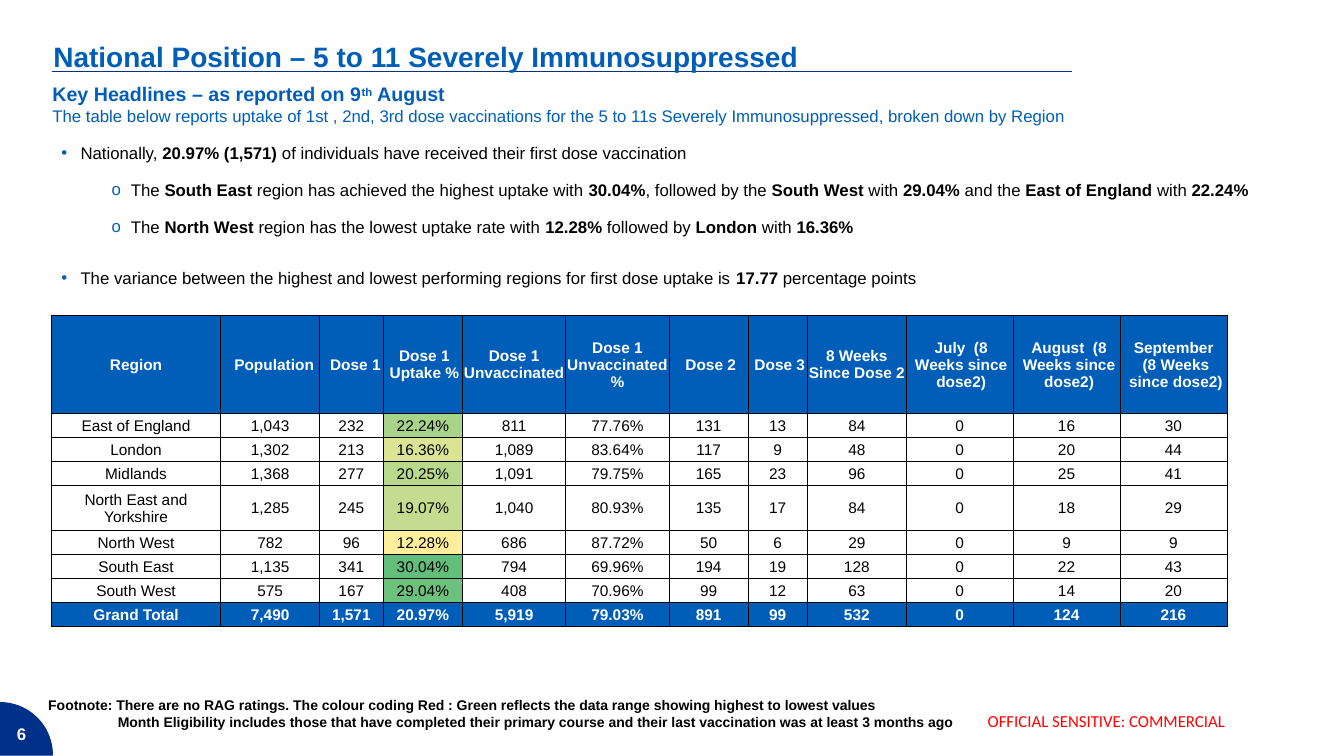
import math

import pptx
import pptx.dml.color
import pptx.enum.shapes
import pptx.enum.text
import pptx.oxml
import pptx.oxml.ns
import pptx.util
from pptx.util import Inches

BLUE, NAVY, BLACK, WHITE, RED = "005EB8", "003087", "000000", "FFFFFF", "FF0000"
LOW_COLOUR, HIGH_COLOUR = "FFEF9C", "63BE7B"

TITLE = "National Position – 5 to 11 Severely Immunosuppressed"
HEADLINE = ("Key Headlines – as reported on 9", "th", " August")
SUBHEAD = ("The table below reports uptake of 1st , 2nd, 3rd dose vaccinations for the "
           "5 to 11s Severely Immunosuppressed, broken down by Region")
MARKING = "OFFICIAL SENSITIVE: COMMERCIAL"
PAGE_NUMBER = "6"

# bullet, left indent, space before, space after, text with **bold** parts
FINDINGS = [
    ("•", 0.19, 0, 6, "Nationally, **20.97% (1,571) **of individuals have received their "
     "first dose vaccination"),
    ("o", 0.69, 6, 6, "The **South East** region has achieved the highest uptake with "
     "**30.04%**, followed by the **South West **with **29.04% **and the "
     "**East of England **with **22.24%**"),
    ("o", 0.69, 6, 6, "The **North West **region has the lowest uptake rate with "
     "**12.28% **followed by **London** with **16.36%**"),
    ("•", 0.19, 16, 0, "The variance between the highest and lowest performing regions for "
     "first dose uptake is **17.77** percentage points"),
]

# heading, column width, left inset of the heading
COLUMNS = [
    ("Region", 1.68, 0.01), ("Population", 0.98, 0.09), ("Dose 1", 0.63, 0.09),
    ("Dose 1 Uptake %", 0.79, 0.04), ("Dose 1 Unvaccinated", 1.02, 0.01),
    ("Dose 1 Unvaccinated %", 1.03, 0.01), ("Dose 2", 0.78, 0.05), ("Dose 3", 0.59, 0.05),
    ("8 Weeks Since Dose 2", 0.98, 0.01), ("July  (8 Weeks since dose2)", 1.06, 0.04),
    ("August  (8 Weeks since dose2)", 1.06, 0.06),
    ("September  (8 Weeks since dose2)", 1.06, 0.06),
]
UPTAKE = 3
REGIONS = [
    ("East of England", "1,043", "232", "22.24%", "811", "77.76%", "131", "13", "84", "0", "16", "30"),
    ("London", "1,302", "213", "16.36%", "1,089", "83.64%", "117", "9", "48", "0", "20", "44"),
    ("Midlands", "1,368", "277", "20.25%", "1,091", "79.75%", "165", "23", "96", "0", "25", "41"),
    ("North East and Yorkshire", "1,285", "245", "19.07%", "1,040", "80.93%", "135", "17", "84", "0", "18", "29"),
    ("North West", "782", "96", "12.28%", "686", "87.72%", "50", "6", "29", "0", "9", "9"),
    ("South East", "1,135", "341", "30.04%", "794", "69.96%", "194", "19", "128", "0", "22", "43"),
    ("South West", "575", "167", "29.04%", "408", "70.96%", "99", "12", "63", "0", "14", "20"),
]
TOTAL = ("Grand Total", "7,490", "1,571", "20.97%", "5,919", "79.03%", "891", "99", "532", "0", "124", "216")
ROW_HEIGHTS = [0.97, 0.24, 0.24, 0.24, 0.44, 0.24, 0.24, 0.24, 0.24]

# text, left indent
FOOTNOTE = [
    ("Footnote: There are no RAG ratings. The colour coding Red : Green reflects the data "
     "range showing highest to lowest values", 0),
    ("Month Eligibility includes those that have completed their primary course and their "
     "last vaccination was at least 3 months ago", 0.69),
]

MIDDLE = pptx.enum.text.MSO_ANCHOR.MIDDLE
CENTER = pptx.enum.text.PP_ALIGN.CENTER


def rgb(colour):
    return pptx.dml.color.RGBColor.from_string(colour)


def apply(target, values):
    for name, value in values.items():
        setattr(target, name, value)


def add_run(paragraph, text, size, colour, bold=False, font="Arial"):
    run = paragraph.add_run()
    run.text = text
    apply(run.font, {"name": font, "size": pptx.util.Pt(size), "bold": bold})
    run.font.color.rgb = rgb(colour)
    return run


def add_box(left, top, width, height, **frame_values):
    frame = slide.shapes.add_textbox(*map(Inches, (left, top, width, height))).text_frame
    apply(frame, {"word_wrap": True, **frame_values})
    return frame


def paragraph_at(frame, index):
    return frame.add_paragraph() if index else frame.paragraphs[0]


def indent(paragraph, left, hanging=0, bullet=None):
    properties = paragraph._p.get_or_add_pPr()
    properties.set("marL", str(Inches(left)))
    properties.set("indent", str(-Inches(hanging)))
    if bullet:
        namespace = pptx.oxml.ns.nsdecls("a")
        for xml in (f'<a:buClr {namespace}><a:srgbClr val="{BLUE}"/></a:buClr>',
                    f'<a:buFont {namespace} typeface="Arial"/>',
                    f'<a:buChar {namespace} char="{bullet}"/>'):
            properties.append(pptx.oxml.parse_xml(xml))


def add_plain_table(left, top, widths, heights):
    """Add a table without banding, with narrow cell margins and no fills."""
    size = map(Inches, (left, top, sum(widths), sum(heights)))
    table = slide.shapes.add_table(len(heights), len(widths), *size).table
    apply(table, {"first_row": False, "horz_banding": False})
    for column, width in zip(table.columns, widths):
        column.width = Inches(width)
    for row, height in zip(table.rows, heights):
        row.height = Inches(height)
    for cell in table.iter_cells():
        apply(cell, {"margin_left": Inches(0.01), "margin_right": Inches(0.01),
                     "margin_top": Inches(0.01), "margin_bottom": 0})
        cell.fill.background()
    return table


def add_borders(cell):
    properties = cell._tc.get_or_add_tcPr()
    for position, side in enumerate(("lnL", "lnR", "lnT", "lnB")):
        properties.insert(position, pptx.oxml.parse_xml(
            f'<a:{side} {pptx.oxml.ns.nsdecls("a")} w="{pptx.util.Pt(0.5)}">'
            f'<a:solidFill><a:srgbClr val="{BLACK}"/></a:solidFill></a:{side}>'))


def percent(text):
    return float(text.rstrip("%"))


def scale_colour(uptake):
    """Blend linearly from the lowest to the highest regional uptake."""
    uptakes = [percent(region[UPTAKE]) for region in REGIONS]
    share = (uptake - min(uptakes)) / (max(uptakes) - min(uptakes))
    channels = zip(rgb(LOW_COLOUR), rgb(HIGH_COLOUR))
    return "".join(f"{round(low + share * (high - low)):02X}" for low, high in channels)


presentation = pptx.Presentation()
apply(presentation, {"slide_width": Inches(13.33), "slide_height": Inches(7.5)})
slide = presentation.slides.add_slide(presentation.slide_layouts[6])

marking = add_box(9.61, 6.95, 2.73, 0.4, vertical_anchor=MIDDLE).paragraphs[0]
marking.alignment = CENTER
add_run(marking, MARKING, 12, RED, font="Calibri")

rule = slide.shapes.add_connector(pptx.enum.shapes.MSO_CONNECTOR.STRAIGHT,
                                  *map(Inches, (0.52, 0.71, 10.63, 0.71)))
rule.line.color.rgb = rgb(NAVY)
rule.line.width = pptx.util.Pt(1)
rule._element.spPr.append(pptx.oxml.parse_xml(f'<a:effectLst {pptx.oxml.ns.nsdecls("a")}/>'))

corner_radius, arc_steps = 0.52, 30
arc = [(Inches(corner_radius * math.sin(angle)), Inches(7.49 - corner_radius * math.cos(angle)))
       for angle in (math.pi / 2 * step / arc_steps for step in range(arc_steps + 1))]
outline = slide.shapes.build_freeform(0, Inches(7.49))
outline.add_line_segments(arc, close=True)
corner = outline.convert_to_shape()
corner.shadow.inherit = False
corner.fill.solid()
corner.fill.fore_color.rgb = rgb(NAVY)
corner.line.color.rgb = rgb(NAVY)
corner.line.width = pptx.util.Pt(0.75)
add_run(add_box(0.07, 7.13, 0.71, 0.3).paragraphs[0], PAGE_NUMBER, 12, WHITE, True)

findings = add_box(0.51, 1.37, 11.99, 1.73)
for index, (bullet, left, before, after, text) in enumerate(FINDINGS):
    finding = paragraph_at(findings, index)
    apply(finding, {"level": int(bullet == "o"), "space_before": pptx.util.Pt(before),
                    "space_after": pptx.util.Pt(after)})
    indent(finding, left, 0.19, bullet)
    for part, words in enumerate(text.split("**")):
        if words:
            add_run(finding, words, 12, BLACK, bold=part % 2 == 1)

headings, widths, heading_insets = zip(*COLUMNS)
uptake_table = add_plain_table(0.51, 3.13, widths, ROW_HEIGHTS)
for row, values in enumerate([headings, *REGIONS, TOTAL]):
    banner = values in (headings, TOTAL)
    for column, value in enumerate(values):
        cell = uptake_table.cell(row, column)
        cell.vertical_anchor = MIDDLE
        if row == 0:
            cell.margin_left = Inches(heading_insets[column])
        add_borders(cell)
        if banner or column == UPTAKE:
            cell.fill.solid()
            cell.fill.fore_color.rgb = rgb(BLUE if banner else scale_colour(percent(value)))
        entry = cell.text_frame.paragraphs[0]
        entry.alignment = CENTER
        add_run(entry, value, 11, WHITE if banner else BLACK, banner)

footnote = add_box(0.38, 6.86, 9.35, 0.44)
for index, (text, left) in enumerate(FOOTNOTE):
    note = paragraph_at(footnote, index)
    indent(note, left)
    add_run(note, text, 10, BLACK, True)

title = add_box(0.43, 0.24, 10.82, 0.67, vertical_anchor=MIDDLE).paragraphs[0]
title.line_spacing = 0.9
add_run(title, TITLE, 20, BLUE, True)

headline_table = add_plain_table(0.51, 0.81, [11.6], [0.04, 0.32])
headline_table.cell(0, 0).vertical_anchor = pptx.enum.text.MSO_ANCHOR.BOTTOM
headline = headline_table.cell(0, 0).text_frame.paragraphs[0]
for words in HEADLINE:
    run = add_run(headline, words, 14, BLUE, True)
    if words == "th":
        run.font._element.set("baseline", "30000")
add_run(headline_table.cell(1, 0).text_frame.paragraphs[0], SUBHEAD, 12, BLUE)

presentation.save("out.pptx")
